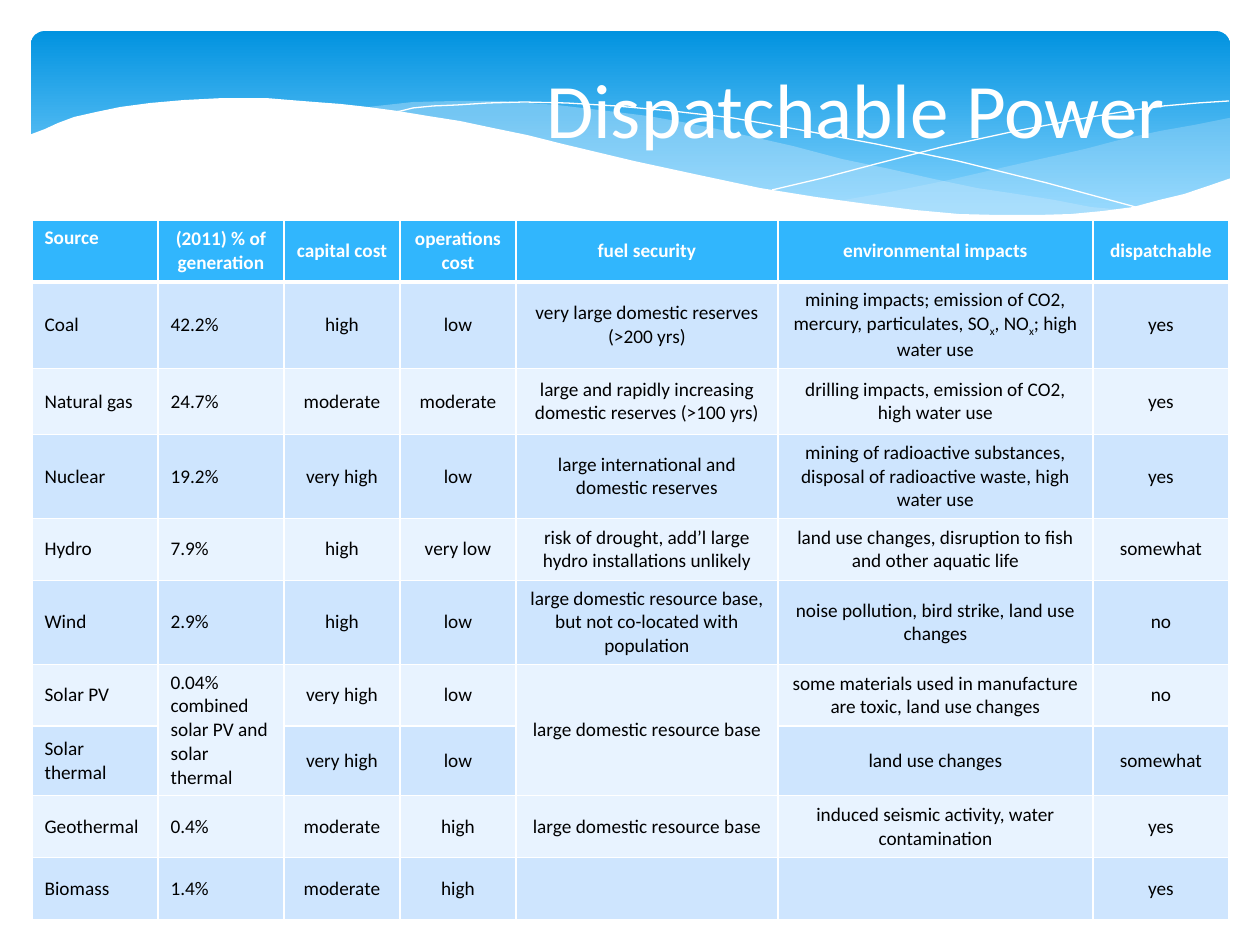
from lxml import etree
from pptx import Presentation
from pptx import util as u
from pptx.dml.color import RGBColor
from pptx.enum import shapes, text
from pptx.oxml import ns

SCALE = u.Inches(1) / 126


def px(length):
    return u.Emu(round(length * SCALE))


def color(code):
    return RGBColor.from_string(code)


deck = Presentation()
deck.slide_width, deck.slide_height = px(1260), px(945)
page = deck.slides.add_slide(deck.slide_layouts[5])

banner = page.shapes.add_shape(
    shapes.MSO_SHAPE.ROUNDED_RECTANGLE, px(31), px(31), px(1199), px(197))
banner.adjustments[0] = 0.07
banner.shadow.inherit = False
banner.line.fill.background()
banner.fill.gradient()
banner.fill.gradient_angle = 270
for stop, (code, position) in zip(banner.fill.gradient_stops, [("0293E0", 0), ("83D3FE", 0.9)]):
    stop.color.rgb = color(code)
    stop.position = position

right_wave = [
    (1229, 118), (1194, 125), (1160, 131), (1123, 139), (1085, 149), (1014, 165), (949, 180),
    (890, 192), (833, 202), (871, 207), (906, 210), (954, 214), (1012, 217), (1052, 217),
    (1087, 214), (1120, 209), (1160, 202), (1196, 192), (1230, 178), (1230, 118)]
middle_wave = [
    (1125, 210), (1091, 207), (1055, 200), (1017, 194), (977, 188), (934, 179), (890, 169),
    (842, 159), (793, 146), (753, 137), (717, 129), (682, 122), (648, 116), (616, 112),
    (557, 105), (503, 101), (455, 101), (413, 102), (377, 106), (360, 108), (407, 113),
    (456, 122), (509, 134), (566, 146), (619, 159), (668, 170), (713, 180), (757, 189),
    (799, 197), (838, 203), (876, 208), (910, 212), (959, 215), (1003, 218), (1056, 217),
    (1092, 214)]
falling_line = [
    (389, 113), (401, 111), (413, 108), (433, 106), (457, 105), (488, 103), (524, 102),
    (567, 103), (616, 106), (672, 111), (733, 118), (801, 130), (876, 144), (958, 161),
    (1047, 183), (1143, 209)]
rising_line = [
    (772, 190), (823, 178), (876, 164), (942, 147), (1016, 131), (1091, 117), (1128, 111),
    (1164, 106), (1198, 103), (1229, 101)]
white_wave = [
    (1231, 178), (1208, 186), (1184, 194), (1159, 200), (1133, 207), (1103, 211), (1071, 214),
    (1037, 215), (999, 215), (959, 214), (915, 210), (867, 204), (816, 197), (760, 188),
    (699, 175), (634, 161), (563, 144), (527, 135), (493, 128), (460, 121), (428, 116),
    (398, 111), (368, 107), (341, 104), (315, 102), (290, 100), (266, 98), (223, 98),
    (184, 100), (150, 103), (120, 107), (96, 112), (74, 117), (58, 123), (45, 129),
    (29, 135), (29, 282), (1231, 282)]

for points, fill, alpha in [
        (right_wave, "C6E7FC", 29), (middle_wave, "C6E7FC", 40), (falling_line, None, None),
        (rising_line, None, None), (white_wave, "FFFFFF", 100)]:
    builder = page.shapes.build_freeform(*points[0], scale=SCALE)
    builder.add_line_segments(points[1:], close=fill is not None)
    wave = builder.convert_to_shape()
    wave.shadow.inherit = False
    if fill:
        wave.fill.solid()
        wave.fill.fore_color.rgb = color(fill)
        wave.line.fill.background()
        tint = wave.element.spPr.find(".//" + ns.qn("a:srgbClr"))
        etree.SubElement(tint, ns.qn("a:alpha"), val=str(alpha * 1000))
    else:
        wave.fill.background()
        wave.line.color.rgb = color("FFFFFF")
        wave.line.width = u.Pt(0)

rows = [
    ["Source", "(2011) % of generation", "capital cost", "operations\vcost", "fuel security",
     "environmental impacts", "dispatchable"],
    ["Coal", "42.2%", "high", "low", "very large domestic reserves (>200 yrs)",
     "mining impacts; emission of CO2, mercury, particulates, SO~x~, NO~x~; high water use",
     "yes"],
    ["Natural gas", "24.7%", "moderate", "moderate",
     "large and rapidly increasing domestic reserves (>100 yrs)",
     "drilling impacts, emission of CO2, high water use", "yes"],
    ["Nuclear", "19.2%", "very high", "low", "large international and domestic reserves",
     "mining of radioactive substances, disposal of radioactive waste, high water use", "yes"],
    ["Hydro", "7.9%", "high", "very low",
     "risk of drought, add’l large hydro installations unlikely",
     "land use changes, disruption to fish and other aquatic life", "somewhat"],
    ["Wind", "2.9%", "high", "low",
     "large domestic resource base, but not co-located with population",
     "noise pollution, bird strike, land use changes", "no"],
    ["Solar PV", "0.04% combined solar PV and solar thermal", "very high", "low",
     "large domestic resource base",
     "some materials used in manufacture are toxic, land use changes", "no"],
    ["Solar thermal", "", "very high", "low", "", "land use changes", "somewhat"],
    ["Geothermal", "0.4%", "moderate", "high", "large domestic resource base",
     "induced seismic activity, water contamination", "yes"],
    ["Biomass", "1.4%", "moderate", "high", "", "", "yes"]]
widths = [126, 126, 116, 116, 262, 315, 136]
heights = [62, 62, 66] + [62] * 7

table = page.shapes.add_table(
    len(rows), len(widths), px(32), px(220), px(sum(widths)), px(sum(heights))).table
for column, width in zip(table.columns, widths):
    column.width = px(width)
for row, height in zip(table.rows, heights):
    row.height = px(height)
for merged in (1, 4):
    table.cell(6, merged).merge(table.cell(7, merged))

for r, row in enumerate(rows):
    for c, words in enumerate(row):
        cell = table.cell(r, c)
        borders = cell._tc.get_or_add_tcPr()
        for side in "LRTB":
            heavy = (r == 0 and side == "B") or (r == 1 and side == "T")
            border = etree.SubElement(
                borders, ns.qn("a:ln" + side), w=str(u.Pt(3 if heavy else 1)))
            solid = etree.SubElement(border, ns.qn("a:solidFill"))
            etree.SubElement(solid, ns.qn("a:srgbClr"), val="FFFFFF")
        cell.fill.solid()
        cell.fill.fore_color.rgb = color("31B6FD" if r == 0 else "CEE5FE" if r % 2 else "E8F3FF")
        if (r, c) != (0, 0):
            cell.vertical_anchor = text.MSO_ANCHOR.MIDDLE
        if not words:
            continue
        para = cell.text_frame.paragraphs[0]
        if "~" in words:
            for n, part in enumerate(words.split("~")):
                span = para.add_run()
                span.text = part
                if n % 2:
                    span._r.get_or_add_rPr().set("baseline", "-25000")
        else:
            para.text = words
        if c > 1 or (r == 0 and c == 1):
            para.alignment = text.PP_ALIGN.CENTER
        para.font.name = "Calibri"
        para.font.size = u.Pt(11)
        para.font.bold = r == 0
        para.font.color.rgb = color("FFFFFF" if r == 0 else "000000")

title = page.shapes.title
title.left, title.top, title.width, title.height = px(514), px(47), px(683), px(121)
title.text_frame.text = "Dispatchable Power"
title.text_frame.vertical_anchor = text.MSO_ANCHOR.MIDDLE
heading = title.text_frame.paragraphs[0]
heading.alignment = text.PP_ALIGN.CENTER
heading.font.name = "Calibri"
heading.font.size = u.Pt(44)
heading.font.color.rgb = color("FFFFFF")
page.shapes.element.append(title.element)

deck.save("out.pptx")
